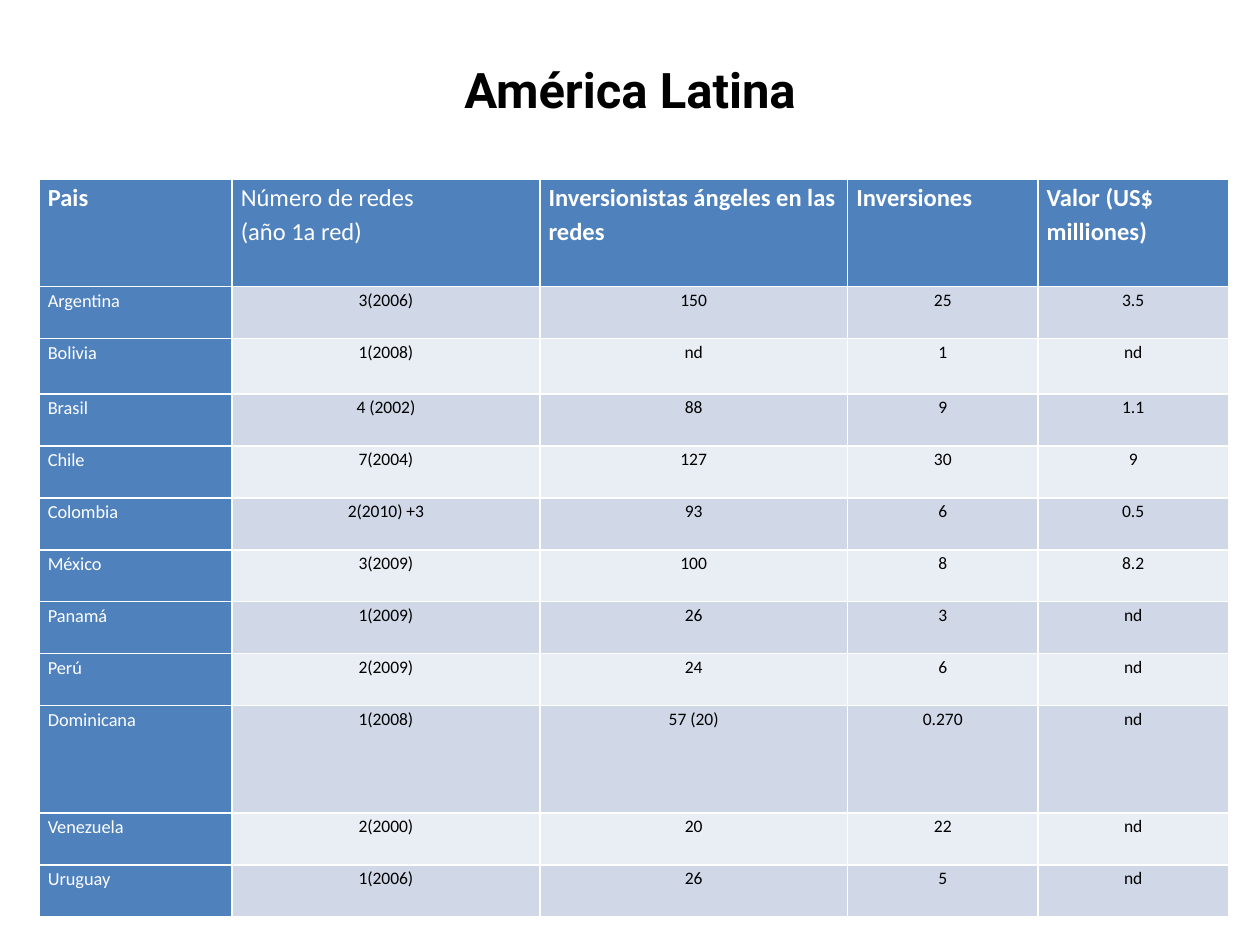
import dataclasses

import pptx
import pptx.dml.color
import pptx.enum.text
import pptx.oxml
import pptx.oxml.ns
import pptx.util

HEADERS = ["Pais", "Número de redes\n(año 1a red)", "Inversionistas ángeles en las redes",
           "Inversiones", "Valor (US$ milliones)"]
LIGHT_HEADER = 1
COUNTRIES = [
    ["Argentina", "3(2006)", "150", "25", "3.5"],
    ["Bolivia", "1(2008)", "nd", "1", "nd"],
    ["Brasil", "4 (2002)", "88", "9", "1.1"],
    ["Chile", "7(2004)", "127", "30", "9"],
    ["Colombia", "2(2010) +3", "93", "6", "0.5"],
    ["México", "3(2009)", "100", "8", "8.2"],
    ["Panamá", "1(2009)", "26", "3", "nd"],
    ["Perú", "2(2009)", "24", "6", "nd"],
    ["Dominicana", "1(2008)", "57 (20)", "0.270", "nd"],
    ["Venezuela", "2(2000)", "20", "22", "nd"],
    ["Uruguay", "1(2006)", "26", "5", "nd"],
]
COLUMN_WEIGHTS = [1.53, 2.44, 2.44, 1.51, 1.51]
ROW_WEIGHTS = [0.85] + [{"Bolivia": 0.44, "Dominicana": 0.85}.get(row[0], 0.41)
                        for row in COUNTRIES]


@dataclasses.dataclass(frozen=True)
class Theme:
    title_font: str = "Roboto"
    table_font: str = "Calibri"
    ink: str = "000000"
    white: str = "FFFFFF"
    accent: str = "4F81BD"
    bands: tuple = ("D0D8E8", "E9EDF4")
    title_size: float = 28
    header_size: float = 14
    country_size: float = 10.5
    figure_size: float = 10
    line_spacing: float = 1.15
    cell_margin: float = 0.07
    border: float = 1


def rgb(color):
    return pptx.dml.color.RGBColor.from_string(color)


class SlideBuilder:
    """Draws on one slide; boxes are (left, top, width, height) shares of its size."""

    def __init__(self, deck, theme):
        self.theme = theme
        self.size = (deck.slide_width, deck.slide_height)
        self.slide = deck.slides.add_slide(deck.slide_layouts.get_by_name("Title Only"))

    def place(self, box):
        return [round(share * self.size[i % 2]) for i, share in enumerate(box)]

    def set_text(self, frame, text, font, size, color, bold, align, spacing=1.0):
        frame.text = text
        for paragraph in frame.paragraphs:
            paragraph.alignment = align
            paragraph.line_spacing = spacing
            for run in paragraph.runs:
                run.font.name = font
                run.font.size = pptx.util.Pt(size)
                run.font.bold = bold
                run.font.color.rgb = rgb(color)

    def title(self, text, box):
        heading = self.slide.shapes.title
        heading.left, heading.top, heading.width, heading.height = self.place(box)
        frame = heading.text_frame
        frame.vertical_anchor = pptx.enum.text.MSO_ANCHOR.TOP
        frame.auto_size = pptx.enum.text.MSO_AUTO_SIZE.NONE
        self.set_text(frame, text, self.theme.title_font, self.theme.title_size,
                      self.theme.ink, True, pptx.enum.text.PP_ALIGN.CENTER)

    def borders(self, cell):
        properties = cell._tc.get_or_add_tcPr()
        width = pptx.util.Pt(self.theme.border)
        for side in ("lnL", "lnR", "lnT", "lnB"):
            properties.append(pptx.oxml.parse_xml(
                f'<a:{side} {pptx.oxml.ns.nsdecls("a")} w="{width}"><a:solidFill>'
                f'<a:srgbClr val="{self.theme.white}"/></a:solidFill></a:{side}>'))

    def cell(self, cell, text, fill, size, color, bold, align):
        self.borders(cell)
        cell.fill.solid()
        cell.fill.fore_color.rgb = rgb(fill)
        cell.margin_left = cell.margin_right = pptx.util.Inches(self.theme.cell_margin)
        cell.margin_top = cell.margin_bottom = 0
        self.set_text(cell.text_frame, text, self.theme.table_font, size, color, bold,
                      align, self.theme.line_spacing)

    def table(self, headers, rows, box, column_weights, row_weights):
        theme, align = self.theme, pptx.enum.text.PP_ALIGN
        left, top, width, height = self.place(box)
        grid = self.slide.shapes.add_table(
            len(rows) + 1, len(headers), left, top, width, height).table
        for column, weight in zip(grid.columns, column_weights):
            column.width = round(width * weight / sum(column_weights))
        for row, weight in zip(grid.rows, row_weights):
            row.height = round(height * weight / sum(row_weights))
        for c, text in enumerate(headers):
            self.cell(grid.cell(0, c), text, theme.accent, theme.header_size,
                      theme.white, c != LIGHT_HEADER, align.LEFT)
        for r, (country, *figures) in enumerate(rows, 1):
            self.cell(grid.cell(r, 0), country, theme.accent, theme.country_size,
                      theme.white, False, align.LEFT)
            band = theme.bands[(r - 1) % len(theme.bands)]
            for c, figure in enumerate(figures, 1):
                self.cell(grid.cell(r, c), figure, band, theme.figure_size,
                          theme.ink, False, align.CENTER)


def main():
    deck = pptx.Presentation()
    deck.slide_width, deck.slide_height = pptx.util.Inches(10), pptx.util.Inches(7.5)
    builder = SlideBuilder(deck, Theme())
    builder.title("América Latina", (0.04, 0.42 / 7.5, 0.92, 7.08 / 7.5))
    builder.table(HEADERS, COUNTRIES, (0.31 / 10, 1.42 / 7.5, 9.44 / 10, 5.86 / 7.5),
                  COLUMN_WEIGHTS, ROW_WEIGHTS)
    deck.save("out.pptx")


if __name__ == "__main__":
    main()
